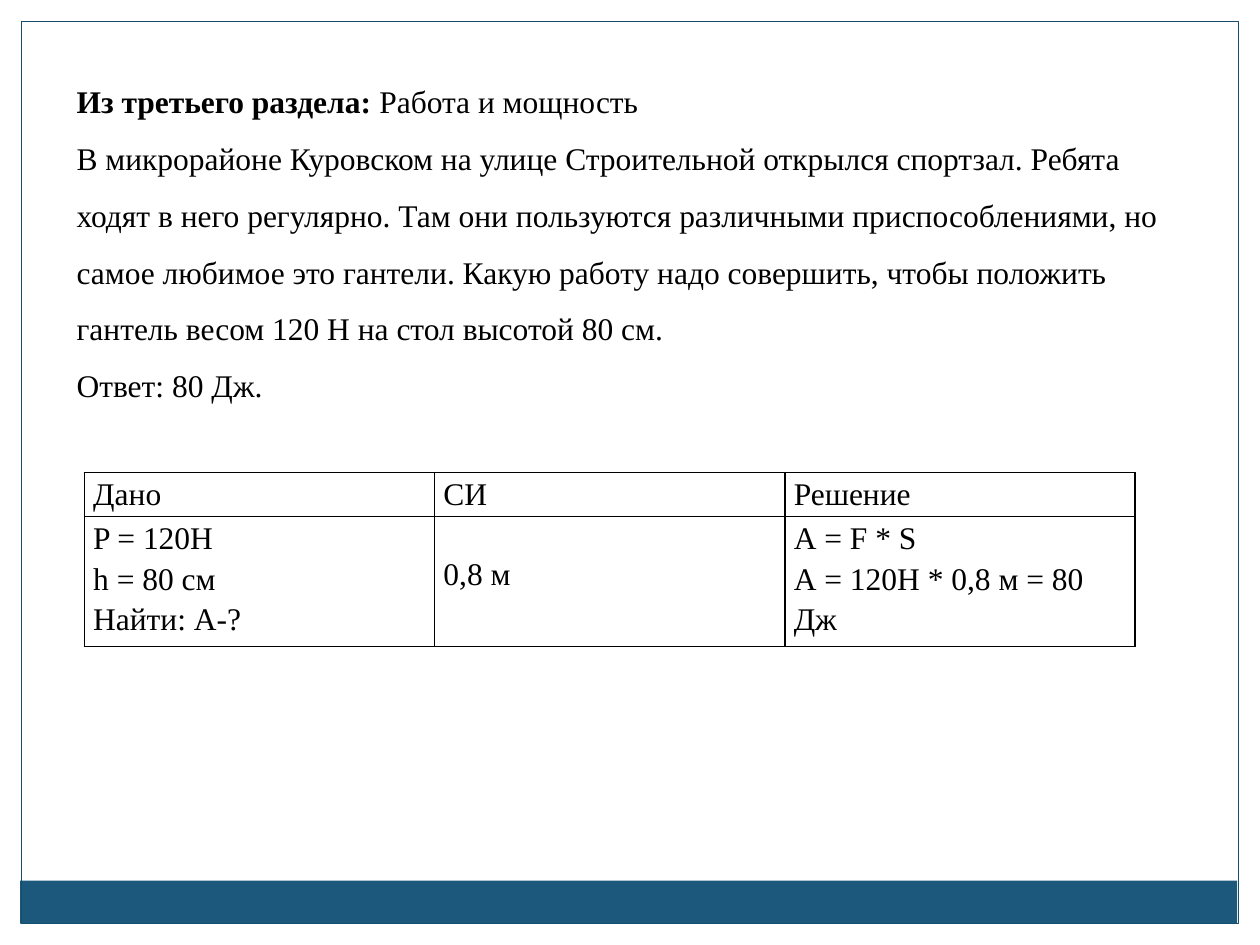
from dataclasses import dataclass

from lxml.etree import SubElement
from pptx import Presentation
from pptx.dml.color import RGBColor
from pptx.enum.shapes import MSO_SHAPE as Shape
from pptx.enum.text import MSO_ANCHOR as Anchor, MSO_AUTO_SIZE as AutoSize
from pptx.oxml.ns import qn
from pptx.util import Inches, Pt

# Content: paragraphs are lists of (text, bold) runs
PROBLEM = [
    [("Из третьего раздела: ", True), ("Работа и мощность", False)],
    [("В микрорайоне Куровском на улице Строительной открылся спортзал. "
      "Ребята ходят в него регулярно. Там они пользуются различными "
      "приспособлениями, но самое любимое это гантели. Какую работу надо "
      "совершить, чтобы положить гантель весом 120 Н на стол высотой 80 см.", False)],
    [("Ответ: 80 Дж.", False)],
]
SOLUTION = [
    [["Дано"], ["СИ"], ["Решение"]],
    [["P = 120Н", "h = 80 см", "Найти: А-?"],
     ["0,8 м"],
     ["А = F * S", "А = 120Н * 0,8 м = 80 Дж"]],
]
SI_VALUE = (1, 1)  # cell whose text sits level with the second given line


@dataclass(frozen=True)
class Theme:
    font: str = "Times New Roman"
    size: Pt = Pt(18)
    text: RGBColor = RGBColor(0, 0, 0)
    margin: RGBColor = RGBColor(0xFF, 0xFF, 0xFF)
    band: RGBColor = RGBColor(0x1B, 0x58, 0x7C)
    frame: RGBColor = RGBColor(0x18, 0x4E, 0x6D)
    grid: str = "000000"


THEME = Theme()
WIDTH, HEIGHT = 10, 7.5
MARGIN, BAND_HEIGHT = 0.17, 0.34
INNER_WIDTH, INNER_HEIGHT = WIDTH - 2 * MARGIN, HEIGHT - 2 * MARGIN
TABLE_LEFT, TABLE_TOP, COLUMN_WIDTH = 0.67, 3.75, 2.78
ROW_HEIGHTS = (0.35, 1.03)

# Filled panels, back to front: left, top, width, height, colour
PANELS = [
    (0, 0, WIDTH, MARGIN, THEME.margin),
    (WIDTH - MARGIN, 0, MARGIN, HEIGHT, THEME.margin),
    (0, 0, MARGIN, HEIGHT, THEME.margin),
    (0.16, HEIGHT - MARGIN - BAND_HEIGHT, INNER_WIDTH, BAND_HEIGHT, THEME.band),
]


def write(frame, paragraphs, spacing):
    for index, runs in enumerate(paragraphs):
        para = frame.paragraphs[0] if index == 0 else frame.add_paragraph()
        para.line_spacing = spacing
        for text, bold in runs:
            span = para.add_run()
            span.text = text
            span.font.name, span.font.size = THEME.font, THEME.size
            span.font.bold = bold
            span.font.color.rgb = THEME.text


def add_panel(page, left, top, width, height):
    panel = page.shapes.add_shape(Shape.RECTANGLE, *map(Inches, (left, top, width, height)))
    panel.shadow.inherit = False
    return panel


def style_cell(cell):
    cell.margin_left = cell.margin_right = Inches(0.07)
    cell.margin_top = cell.margin_bottom = 0
    properties = cell._tc.get_or_add_tcPr()
    for side in ("lnL", "lnR", "lnT", "lnB"):
        line = SubElement(properties, qn(f"a:{side}"), w=str(Pt(1)))
        SubElement(SubElement(line, qn("a:solidFill")), qn("a:srgbClr"), val=THEME.grid)
    cell.fill.background()


deck = Presentation()
deck.slide_width, deck.slide_height = Inches(WIDTH), Inches(HEIGHT)
page = deck.slides.add_slide(deck.slide_layouts[6])

# White margins, bottom band and page frame
for *place, colour in PANELS:
    panel = add_panel(page, *place)
    panel.fill.solid()
    panel.fill.fore_color.rgb = colour
    panel.line.fill.background()
border = add_panel(page, MARGIN, MARGIN, INNER_WIDTH, INNER_HEIGHT)
border.fill.background()
border.line.color.rgb = THEME.frame
border.line.width = Pt(0.75)

# Solution table
column_count = len(SOLUTION[0])
table = page.shapes.add_table(
    len(SOLUTION), column_count, Inches(TABLE_LEFT), Inches(TABLE_TOP),
    Inches(COLUMN_WIDTH * column_count), Inches(sum(ROW_HEIGHTS))).table
table.first_row = table.horz_banding = False
for column in table.columns:
    column.width = Inches(COLUMN_WIDTH)
for row, height in zip(table.rows, ROW_HEIGHTS):
    row.height = Inches(height)
for r, row_texts in enumerate(SOLUTION):
    for c, lines in enumerate(row_texts):
        cell = table.cell(r, c)
        style_cell(cell)
        write(cell.text_frame, [[(line, False)] for line in lines], 1.15)
table.cell(*SI_VALUE).margin_top = Inches(0.28)

# Problem text
box = page.shapes.add_textbox(Inches(0.51), Inches(0.44), Inches(9.06), Inches(2.83))
box.text_frame.word_wrap = True
box.text_frame.auto_size = AutoSize.SHAPE_TO_FIT_TEXT
box.text_frame.vertical_anchor = Anchor.MIDDLE
write(box.text_frame, PROBLEM, 1.5)

deck.save("out.pptx")
